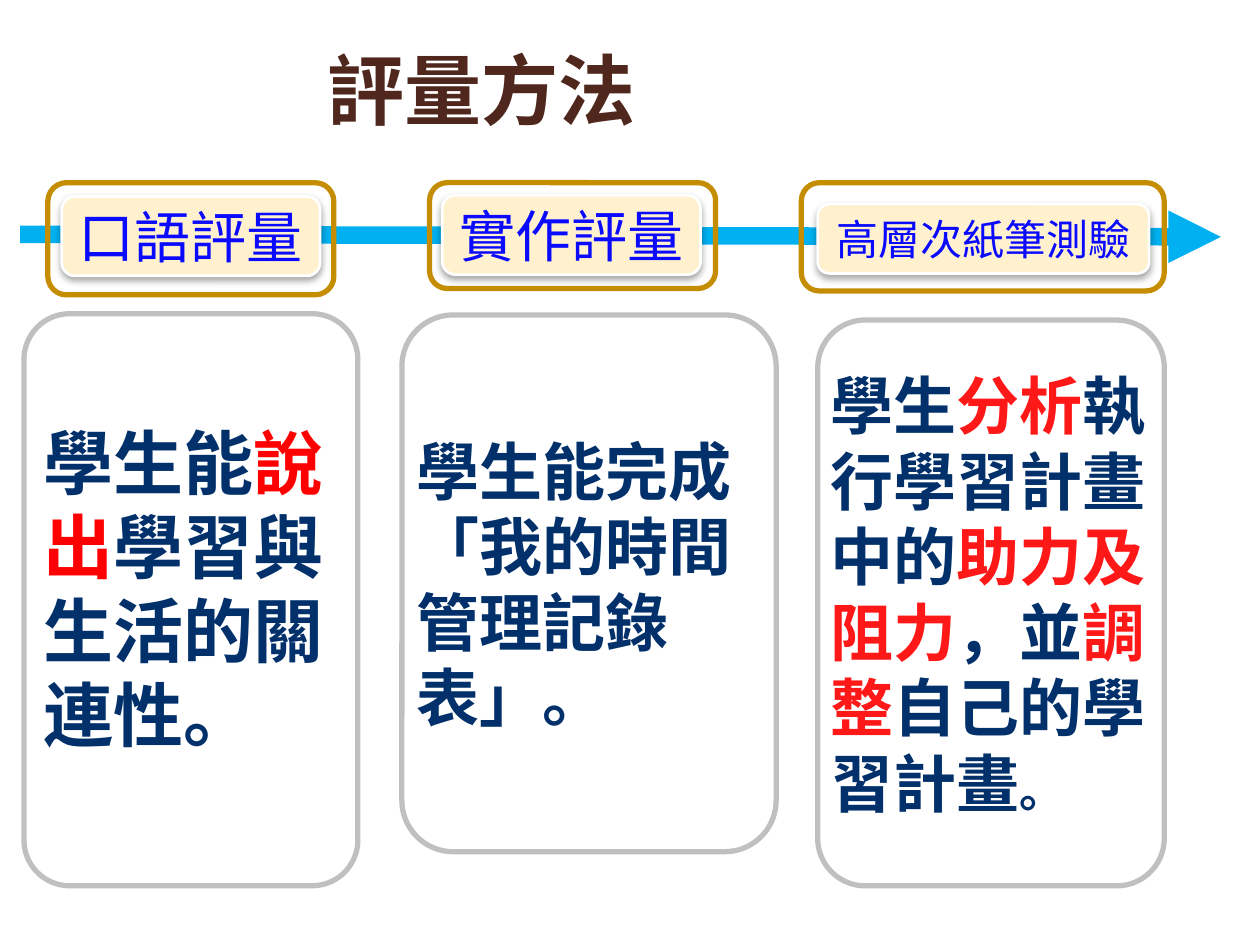
from typing import NamedTuple, Optional

from lxml.etree import SubElement
from pptx import Presentation
from pptx.dml.color import RGBColor
from pptx.enum.shapes import MSO_CONNECTOR as Connector, MSO_SHAPE as Preset
from pptx.enum.text import MSO_ANCHOR as Anchor, PP_ALIGN as Align
from pptx.oxml.ns import qn
from pptx.util import Emu, Pt

PX = 9144  # EMU per px, 100 px to the inch
FONT = "Noto Sans CJK SC"
LINE_PITCH = 1.2

WHITE = RGBColor(0xFF, 0xFF, 0xFF)
NAVY = RGBColor(0x01, 0x30, 0x6B)
RED = RGBColor(0xFF, 0x00, 0x00)
SOFT_RED = RGBColor(0xFF, 0x18, 0x18)
BROWN = RGBColor(0x4F, 0x27, 0x1C)
BLUE = RGBColor(0x0A, 0x0A, 0xFF)
CREAM = RGBColor(0xFF, 0xF1, 0xCE)
GOLD = RGBColor(0xC5, 0x8D, 0x01)
GREY = RGBColor(0xC0, 0xC0, 0xC0)
SKY = RGBColor(0x00, 0xB0, 0xF0)


class Box(NamedTuple):
    left: int
    top: int
    width: int
    height: int

    def emu(self) -> list:
        return [Emu(side * PX) for side in self]


class Run(NamedTuple):
    text: str
    color: RGBColor = NAVY
    size: Optional[int] = None


class Method(NamedTuple):
    name: str
    name_size: int
    label: Box
    frame: Box
    panel: Box
    runs: list
    size: int
    text_box: Optional[Box] = None  # None: the text sits in the panel itself


METHODS = [
    Method("口語評量", 32, Box(49, 156, 205, 63), Box(38, 145, 227, 89),
           Box(19, 249, 265, 454),
           [Run("學生能"), Run("說出", RED), Run("學習與生活的關連性。")],
           40, Box(25, 328, 260, 279)),
    Method("實作評量", 32, Box(351, 155, 205, 63), Box(341, 145, 227, 84),
           Box(319, 250, 297, 426),
           [Run("學生能完成「我的時間管理記錄表」。")], 36),
    Method("高層次紙筆測驗", 24, Box(649, 162, 263, 55), Box(636, 145, 288, 86),
           Box(649, 254, 275, 449),
           [Run("學生"), Run("分析", SOFT_RED), Run("執行學習計畫中的"),
            Run("助力及阻力", SOFT_RED), Run("，並"), Run("調整", SOFT_RED),
            Run("自己的學習計畫"), Run("。", size=26)],
           36, Box(649, 286, 290, 374)),
]


def set_all(target, values: dict) -> None:
    for name, value in values.items():
        setattr(target, name, value)


def write(frame, runs: list, size: int, bold: bool, align=Align.LEFT,
          pitch: Optional[float] = None) -> None:
    frame.word_wrap = True
    paragraph = frame.paragraphs[0]
    paragraph.alignment = align
    if pitch:
        paragraph.line_spacing = Pt(round(size * pitch, 1))
    for part in runs:
        run = paragraph.add_run()
        run.text = part.text
        set_all(run.font, {"size": Pt(part.size or size), "bold": bold, "name": FONT})
        run.font.color.rgb = part.color
        SubElement(run.font._element, qn("a:ea"), typeface=FONT)


def rounded(slide, box: Box, line: RGBColor, weight: float,
            fill: Optional[RGBColor] = None, corner: Optional[float] = None):
    shape = slide.shapes.add_shape(Preset.ROUNDED_RECTANGLE, *box.emu())
    shape.shadow.inherit = False
    if corner is not None:
        shape.adjustments[0] = corner
    if fill is None:
        shape.fill.background()
    else:
        shape.fill.solid()
        shape.fill.fore_color.rgb = fill
    shape.line.color.rgb = line
    shape.line.width = Pt(weight)
    return shape


def draw_panel(slide, method: Method) -> None:
    panel = rounded(slide, method.panel, GREY, 3, corner=0.137)
    if method.text_box is None:
        set_all(panel.text_frame, {"margin_left": 0, "margin_right": 0,
                                   "vertical_anchor": Anchor.MIDDLE})
        write(panel.text_frame, method.runs, method.size, True, pitch=LINE_PITCH)


def draw_arrow(slide) -> None:
    ends = [Emu(v * PX) for v in (16, 186, 969, 188)]
    arrow = slide.shapes.add_connector(Connector.STRAIGHT, *ends)
    arrow.line.color.rgb = SKY
    arrow.line.width = Pt(10)
    SubElement(arrow.line._get_or_add_ln(), qn("a:tailEnd"), type="triangle")
    SubElement(arrow._element.spPr, qn("a:effectLst"))


def draw_label(slide, method: Method) -> None:
    label = rounded(slide, method.label, WHITE, 1.57, fill=CREAM)
    effects = label._element.spPr.find(qn("a:effectLst"))
    shadow = SubElement(effects, qn("a:outerShdw"), blurRad=str(Pt(4)),
                        dist=str(Pt(2)), dir="5400000", rotWithShape="0")
    black = SubElement(shadow, qn("a:srgbClr"), val="000000")
    SubElement(black, qn("a:alpha"), val="35000")
    label.text_frame.vertical_anchor = Anchor.MIDDLE
    write(label.text_frame, [Run(method.name, BLUE)], method.name_size, False,
          Align.CENTER)


def draw_text(slide, method: Method) -> None:
    if method.text_box is not None:
        frame = slide.shapes.add_textbox(*method.text_box.emu()).text_frame
        write(frame, method.runs, method.size, True, pitch=LINE_PITCH)


def draw_frame(slide, method: Method) -> None:
    rounded(slide, method.frame, GOLD, 3)


def draw_title(slide) -> None:
    title = slide.shapes.title
    sides = ("left", "top", "width", "height")
    set_all(title, dict(zip(sides, Box(12, 28, 912, 84).emu())))
    set_all(title.text_frame, {"margin_left": Emu(248 * PX),
                               "vertical_anchor": Anchor.MIDDLE})
    write(title.text_frame, [Run("評量方法", BROWN)], 44, True)


def main() -> None:
    deck = Presentation()
    set_all(deck, {"slide_width": Emu(1000 * PX), "slide_height": Emu(750 * PX)})
    slide = deck.slides.add_slide(deck.slide_layouts.get_by_name("Title Only"))
    draw_title(slide)

    # Panels lie at the back, then the arrow, then everything on it
    for method in METHODS:
        draw_panel(slide, method)
    draw_arrow(slide)
    for draw in (draw_label, draw_text, draw_frame):
        for method in METHODS:
            draw(slide, method)
    deck.save("out.pptx")


if __name__ == "__main__":
    main()
